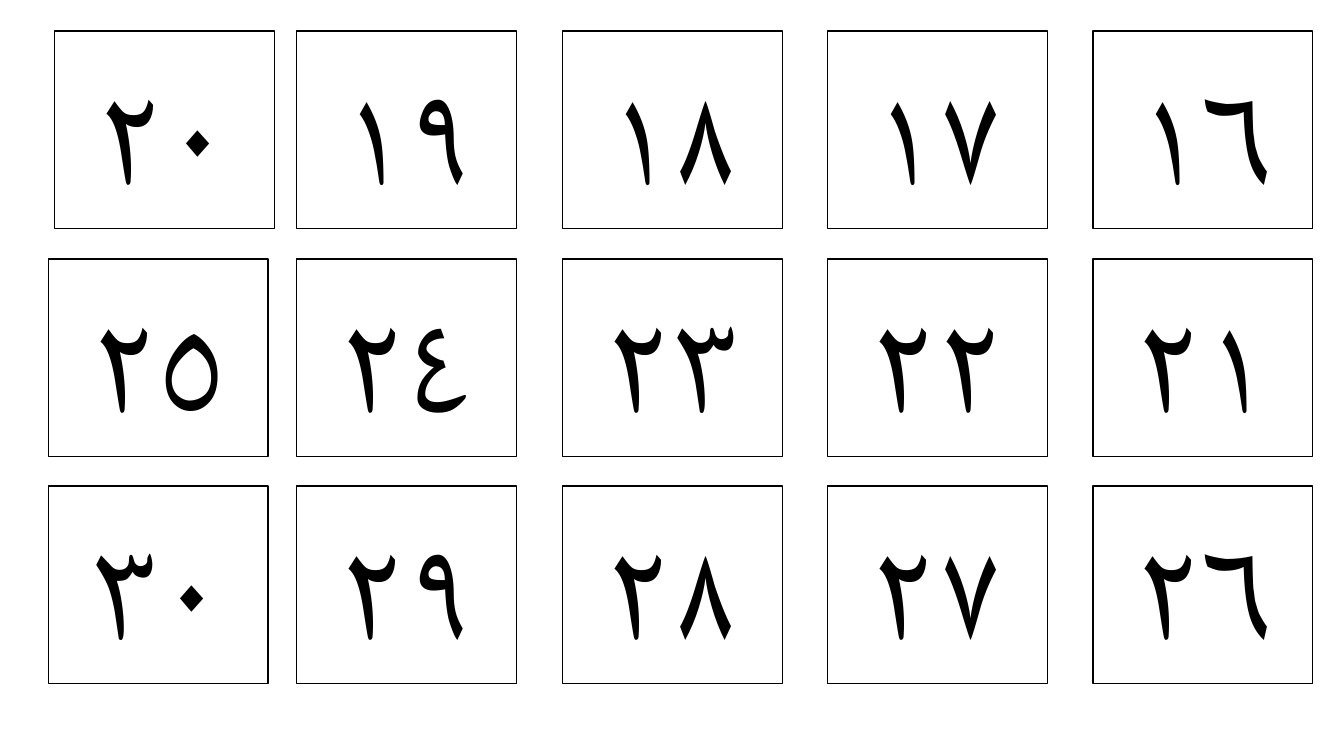
from lxml.etree import SubElement
from pptx import Presentation
from pptx.dml.color import RGBColor
from pptx.enum.shapes import MSO_SHAPE as SHAPE
from pptx.enum.text import MSO_ANCHOR as ANCHOR, PP_ALIGN as ALIGN
from pptx.oxml.ns import qn
from pptx.util import Inches, Pt

ARABIC_DIGITS = str.maketrans("0123456789", "٠١٢٣٤٥٦٧٨٩")
FIRST_NUMBER = 16
ROW_TOPS = (0.31, 2.57, 4.82)
COLUMN_LEFTS = (10.84, 8.21, 5.58, 2.94, 0.48)
TOP_LEFT_CARD_LEFT = 0.54


def color(value):
    return RGBColor.from_string(value)


def write_text(tf, text, size=96, font="Calibri", ink="000000", align=ALIGN.CENTER):
    p = tf.paragraphs[0]
    p.alignment = align
    p._p.get_or_add_pPr().set("rtl", "1")
    r = p.add_run()
    r.text = text
    r.font.size = Pt(size)
    r.font.name = font
    r.font.color.rgb = color(ink)
    SubElement(r._r.get_or_add_rPr(), qn("a:cs"), typeface=font)


class NumberSlide:
    card_width = 2.18
    card_height = 1.96
    ink = "000000"

    def __init__(self, prs):
        self.s = prs.slides.add_slide(prs.slide_layouts[6])

    def card(self, left, top, text):
        sp = self.s.shapes.add_shape(
            SHAPE.RECTANGLE, Inches(left), Inches(top),
            Inches(self.card_width), Inches(self.card_height))
        sp.shadow.inherit = False
        sp.fill.background()
        sp.line.color.rgb = color(self.ink)
        sp.line.width = Pt(1)
        tf = sp.text_frame
        tf.word_wrap = True
        tf.vertical_anchor = ANCHOR.MIDDLE
        write_text(tf, text, ink=self.ink)


def main():
    prs = Presentation()
    prs.slide_width = Inches(13.33)
    prs.slide_height = Inches(7.5)
    slide = NumberSlide(prs)
    number = FIRST_NUMBER
    for top in ROW_TOPS:
        for left in COLUMN_LEFTS:
            if number == 20:
                left = TOP_LEFT_CARD_LEFT
            slide.card(left, top, str(number).translate(ARABIC_DIGITS))
            number += 1
    prs.save("out.pptx")


if __name__ == "__main__":
    main()
